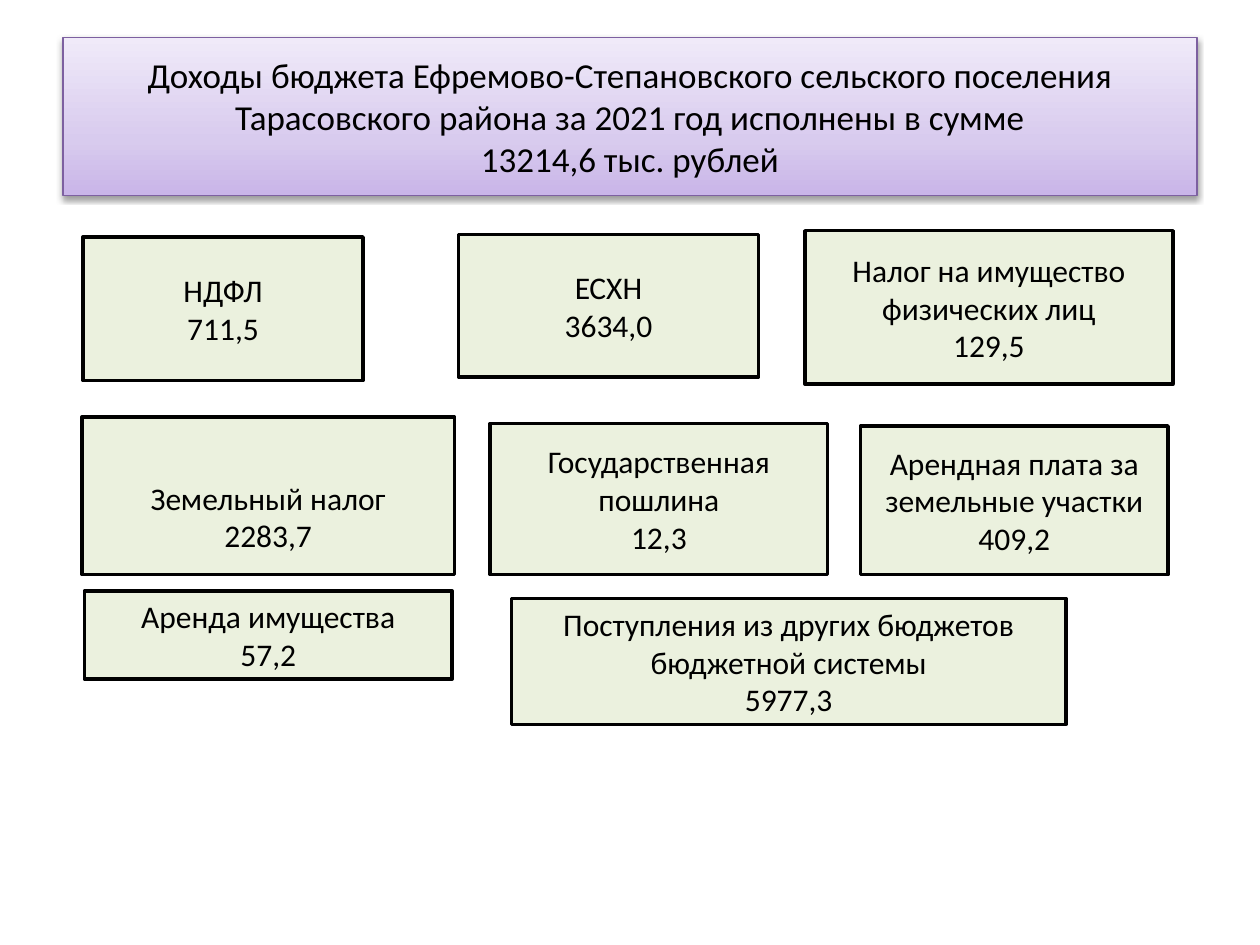
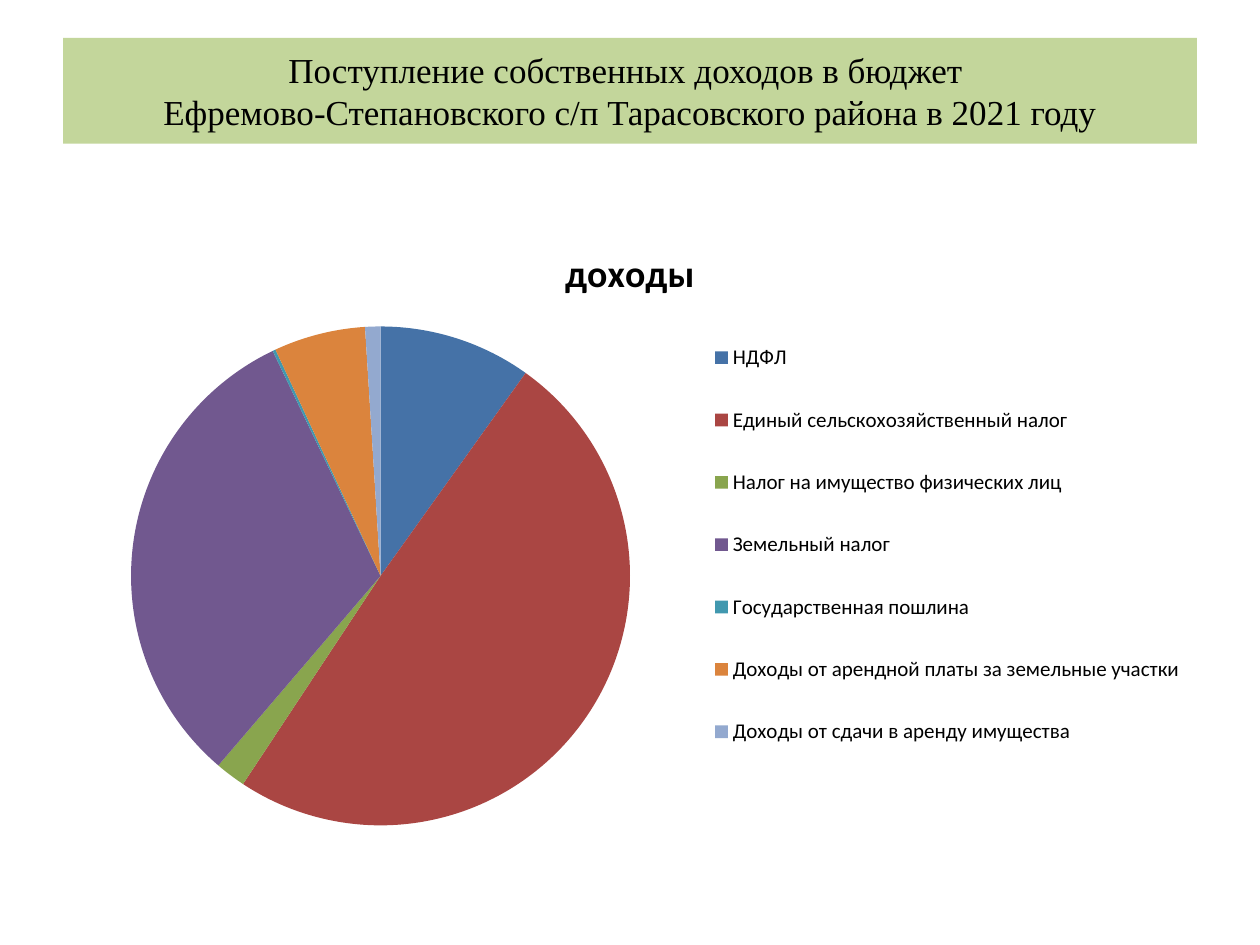
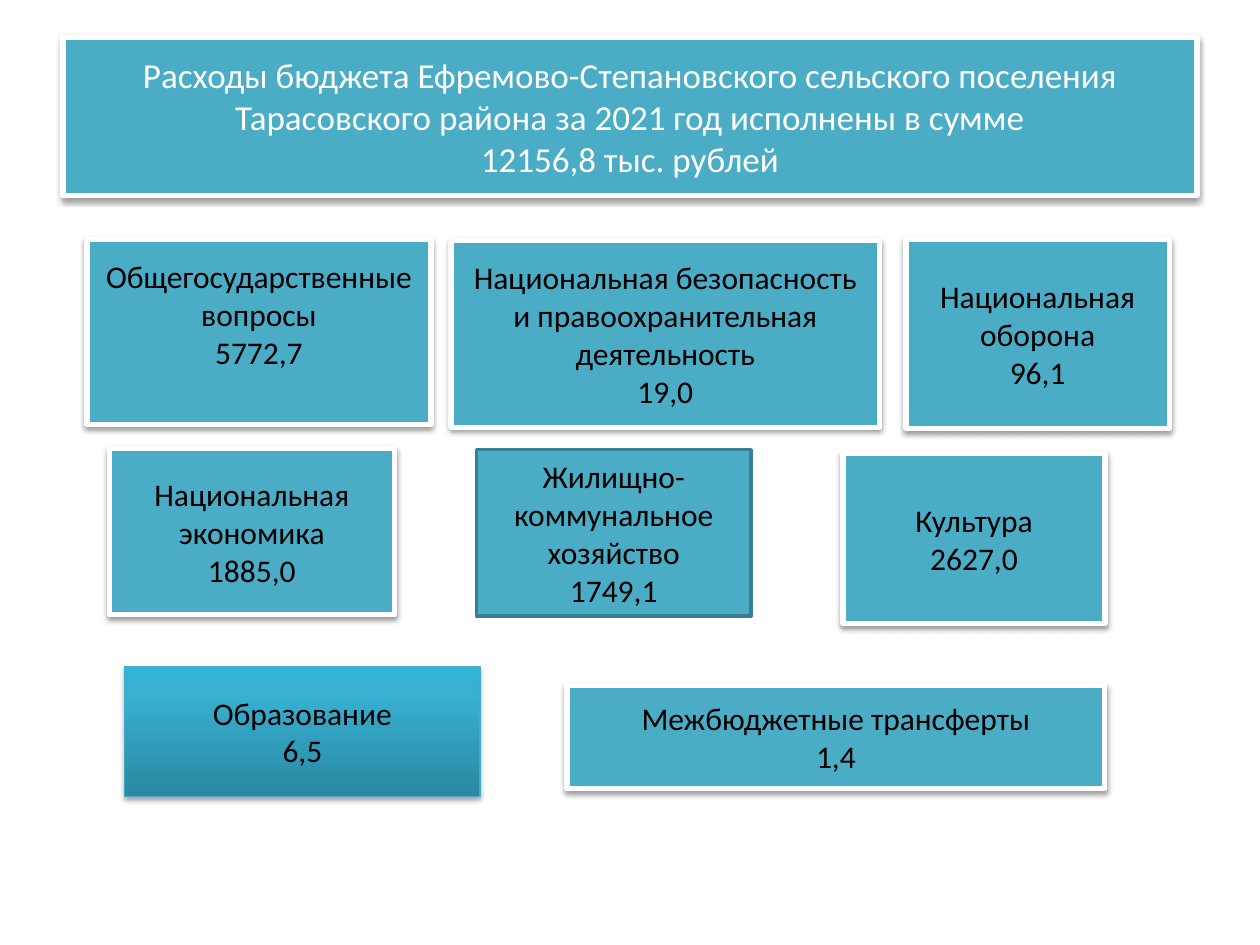
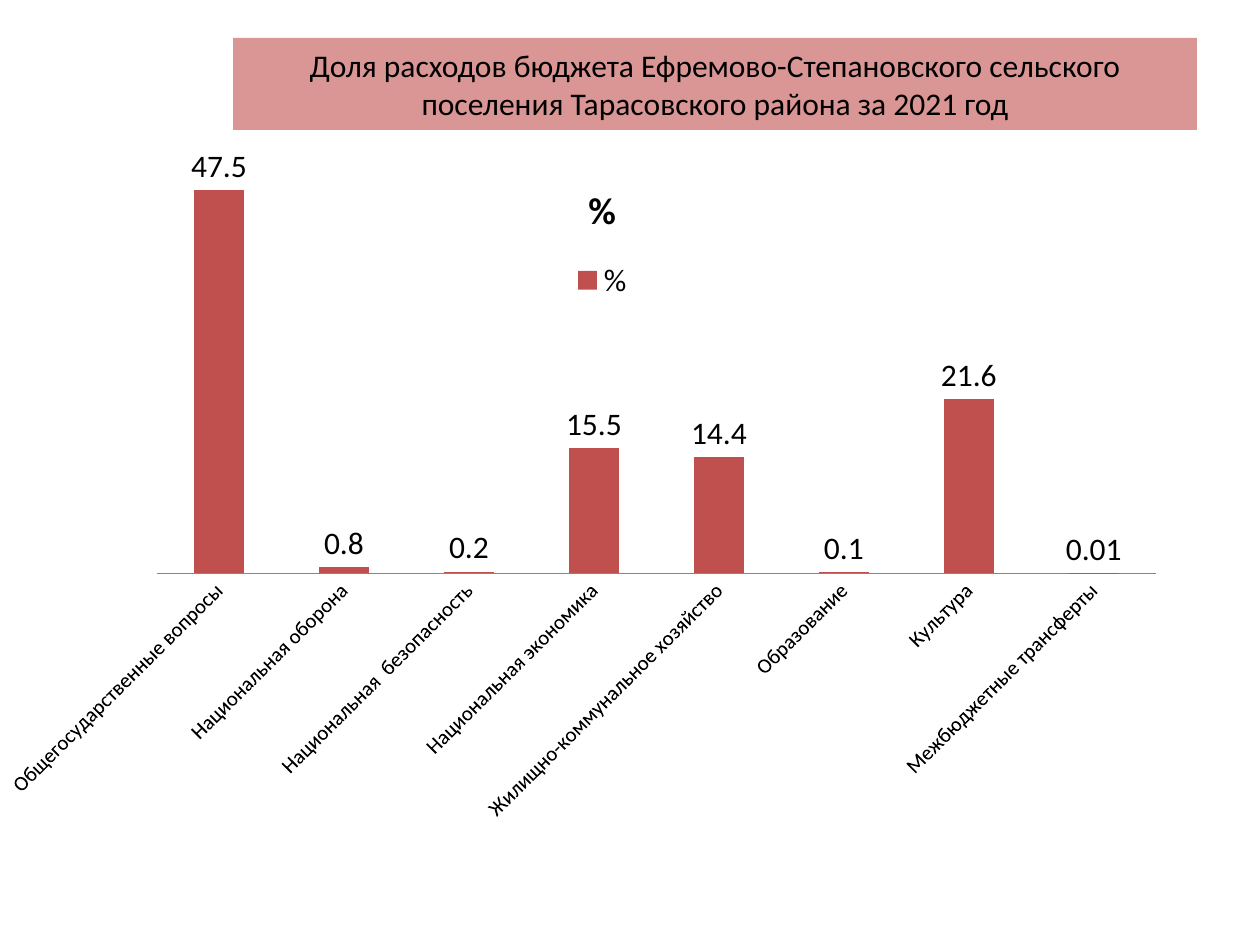
import lxml.etree
import pptx
import pptx.chart.data
import pptx.dml.color
import pptx.enum.chart
import pptx.enum.shapes
import pptx.enum.text
import pptx.oxml
import pptx.oxml.ns
import pptx.util

Pt = pptx.util.Pt
RGB = pptx.dml.color.RGBColor
qn = pptx.oxml.ns.qn
nsdecls = pptx.oxml.ns.nsdecls

BLACK = RGB(0, 0, 0)
WHITE = RGB(255, 255, 255)
PALE_GREEN = RGB(0xEB, 0xF1, 0xDE)
GREEN = RGB(0xC3, 0xD6, 0x9B)
TEAL = RGB(0x4B, 0xAC, 0xC6)
DARK_TEAL = RGB(0x37, 0x7F, 0x92)
EDGE_TEAL = RGB(0x46, 0xAA, 0xC5)
PURPLE = RGB(0x7D, 0x60, 0xA0)
PINK = RGB(0xD9, 0x96, 0x94)
RED = RGB(0xC0, 0x50, 0x4D)
GREY = RGB(0x86, 0x86, 0x86)
LILAC_GRADIENT = [(0, RGB(0xC9, 0xB5, 0xE8)), (35, RGB(0xD8, 0xCB, 0xEE)), (100, RGB(0xF0, 0xEA, 0xF9))]
TEAL_GRADIENT = [(0, RGB(0x2A, 0x88, 0xA2)), (80, RGB(0x37, 0xB1, 0xD2)), (100, RGB(0x34, 0xB4, 0xD6))]
PIE_COLORS = [RGB(0x45, 0x72, 0xA7), RGB(0xAA, 0x46, 0x43), RGB(0x89, 0xA5, 0x4E), RGB(0x71, 0x58, 0x8F),
              RGB(0x41, 0x98, 0xAF), RGB(0xDB, 0x84, 0x3D), RGB(0x93, 0xA9, 0xCF)]

FRAME = {"word_wrap": True, "auto_size": pptx.enum.text.MSO_AUTO_SIZE.NONE,
         "vertical_anchor": pptx.enum.text.MSO_ANCHOR.MIDDLE}
# Shadow values: opacity in percent, distance in points
GREEN_CARD = {"fill": PALE_GREEN, "line": (BLACK, 2)}
TEAL_CARD = {"fill": TEAL, "line": (WHITE, 3), "shadow": (38, 1.6)}
OUTLINED_CARD = {"fill": TEAL, "line": (DARK_TEAL, 2)}
GRADIENT_CARD = {"fill": TEAL_GRADIENT, "line": (EDGE_TEAL, 0.75), "shadow": (35, 1.8)}


def style_box(sp, paragraphs, fill, line=None, shadow=None, font="Calibri", size=18, color=BLACK,
              pad_top=3.6, pad_bottom=3.6):
    """Fill, outline and shade a box and write its centred paragraphs."""
    if isinstance(fill, list):
        sp.fill.gradient()
        sp.fill.gradient_angle = 90
        stops = sp._element.spPr.find(qn("a:gradFill")).find(qn("a:gsLst"))
        for stop in list(stops):
            stops.remove(stop)
        for pos, rgb in fill:
            stop = lxml.etree.SubElement(stops, qn("a:gs"), pos=str(pos * 1000))
            lxml.etree.SubElement(stop, qn("a:srgbClr"), val=str(rgb))
    else:
        sp.fill.solid()
        sp.fill.fore_color.rgb = fill
    if line:
        sp.line.color.rgb, sp.line.width = line[0], Pt(line[1])
    else:
        sp.line.fill.background()
    sp.shadow.inherit = False
    if shadow:
        opacity, distance = shadow
        sp._element.spPr.find(qn("a:effectLst")).append(pptx.oxml.parse_xml(
            f'<a:outerShdw {nsdecls("a")} blurRad="{Pt(3.1)}" dist="{Pt(distance)}" dir="5400000" rotWithShape="0">'
            f'<a:srgbClr val="000000"><a:alpha val="{opacity * 1000}"/></a:srgbClr></a:outerShdw>'))
    tf = sp.text_frame
    for name, value in {**FRAME, "margin_top": Pt(pad_top), "margin_bottom": Pt(pad_bottom)}.items():
        setattr(tf, name, value)
    for i, text in enumerate(paragraphs):
        p = tf.add_paragraph() if i else tf.paragraphs[0]
        p.text = text
        p.alignment = pptx.enum.text.PP_ALIGN.CENTER
        for r in p.runs:
            r.font.name, r.font.size, r.font.color.rgb = font, Pt(size), color


def set_layout(parent, index, x, y, w, h, inner=False):
    """Place a chart part by fractions of the chart area."""
    old = parent.find(qn("c:layout"))
    if old is not None:
        parent.remove(old)
    values = {"xMode": "edge", "yMode": "edge", "x": x, "y": y, "w": w, "h": h}
    if inner:
        values = {"layoutTarget": "inner", **values}
    layout = lxml.etree.Element(qn("c:layout"))
    manual = lxml.etree.SubElement(layout, qn("c:manualLayout"))
    for name, value in values.items():
        lxml.etree.SubElement(manual, qn("c:" + name), val=str(value))
    parent.insert(index, layout)


prs = pptx.Presentation()
prs.slide_width, prs.slide_height = Pt(720), Pt(540)

# Titles: text, left, width, height, format
titles = [
    ("Доходы бюджета Ефремово-Степановского сельского поселения Тарасовского района за 2021 год "
     "исполнены в сумме\n13214,6 тыс. рублей", 36, 648, 90,
     {"fill": LILAC_GRADIENT, "line": (PURPLE, 0.75), "shadow": (38, 1.6), "size": 20}),
    ("Поступление собственных доходов в бюджет \nЕфремово-Степановского с/п Тарасовского района в 2021 году",
     36, 648, 60.5, {"fill": GREEN, "font": "Times New Roman", "size": 20}),
    ("Расходы бюджета Ефремово-Степановского сельского поселения Тарасовского района за 2021 год "
     "исполнены в сумме\n12156,8 тыс. рублей", 36, 648, 90, {**TEAL_CARD, "size": 20, "color": WHITE}),
    ("Доля расходов бюджета Ефремово-Степановского сельского поселения Тарасовского района за 2021 год",
     133.2, 550.8, 52.6, {"fill": PINK}),
]
for text, left, width, height, fmt in titles:
    s = prs.slides.add_slide(prs.slide_layouts[5])
    sp = s.shapes.title
    sp.left, sp.top, sp.width, sp.height = Pt(left), Pt(21.6), Pt(width), Pt(height)
    style_box(sp, [text], **fmt)
income, income_pie, spending, spending_bars = prs.slides

# Cards: slide, name, amount, (left, top, width, height), format
cards = [
    (income, "НДФЛ", "711,5", (47.5, 135.4, 160, 82), GREEN_CARD),
    (income, "ЕСХН", "3634,0", (262, 134, 171.4, 81.4), GREEN_CARD),
    (income, "Налог на имущество физических лиц", "129,5", (460, 131.8, 210.2, 87.8), GREEN_CARD),
    (income, "Земельный налог", "2283,7", (46.8, 238.3, 213, 90), {**GREEN_CARD, "pad_top": 27}),
    (income, "Государственная пошлина", "12,3", (280, 242, 193, 86.4), GREEN_CARD),
    (income, "Арендная плата за земельные участки", "409,2", (491.8, 243.4, 175.7, 85), GREEN_CARD),
    (income, "Поступления из других бюджетов бюджетной системы", "5977,3", (292.3, 342, 316.8, 72), GREEN_CARD),
    (income, "Аренда имущества", "57,2", (48.2, 337.7, 210.2, 50.4), GREEN_CARD),
    (spending, "Общегосударственные вопросы", "5772,7", (49.7, 136.8, 196.6, 105.8),
     {**TEAL_CARD, "pad_bottom": 24}),
    (spending, "Национальная безопасность и правоохранительная деятельность", "19,0",
     (257.8, 137.5, 244.8, 106.6), TEAL_CARD),
    (spending, "Национальная оборона", "96,1", (517.7, 136.8, 150.5, 108), TEAL_CARD),
    (spending, "Жилищно-коммунальное хозяйство", "1749,1", (272.2, 257, 157, 95), OUTLINED_CARD),
    (spending, "Культура", "2627,0", (481.7, 259.2, 149.8, 97.2), TEAL_CARD),
    (spending, "Межбюджетные трансферты", "1,4", (324, 391.7, 307.4, 59), TEAL_CARD),
    (spending, "Национальная экономика", "1885,0", (62.6, 256.3, 162.7, 95), TEAL_CARD),
    (spending, "Образование", "6,5", (71.3, 380.9, 203, 74.2), GRADIENT_CARD),
]
for s, name, amount, box, fmt in cards:
    sp = s.shapes.add_shape(pptx.enum.shapes.MSO_SHAPE.RECTANGLE, *map(Pt, box))
    style_box(sp, [name, amount], **fmt)

# Charts: slide, type, box, title, series name, legend position, values
XL = pptx.enum.chart
charts = [
    (income_pie, XL.XL_CHART_TYPE.PIE, (36, 126, 648, 356.4), "доходы", "доходы", XL.XL_LEGEND_POSITION.RIGHT,
     {"НДФЛ": 10, "Единый сельскохозяйственный налог": 50, "Налог на имущество физических лиц": 2,
      "Земельный налог": 32, "Государственная пошлина": 0.2,
      "Доходы от арендной платы за земельные участки": 6, "Доходы от сдачи в аренду имущества": 1}),
    (spending_bars, XL.XL_CHART_TYPE.COLUMN_CLUSTERED, (0, 84.2, 688.3, 455.8), "%", "%",
     XL.XL_LEGEND_POSITION.TOP,
     {"Общегосударственные вопросы": 47.5, "Национальная оборона": 0.8, "Национальная  безопасность": 0.2,
      "Национальная экономика": 15.5, "Жилищно-коммунальное хозяйство": 14.4, "Образование": 0.1,
      "Культура": 21.6, "Межбюджетные трансферты": 0.01}),
]
drawn = []
for s, kind, box, title, series, legend, values in charts:
    data = pptx.chart.data.CategoryChartData()
    data.categories = list(values)
    data.add_series(series, list(values.values()))
    chart = s.shapes.add_chart(kind, *map(Pt, box), data).chart
    chart.font.name, chart.font.size, chart.font.color.rgb = "Calibri", Pt(18), BLACK
    chart.has_title = True
    tf = chart.chart_title.text_frame
    tf.text = title
    for name, value in {"name": "Calibri", "size": Pt(21.6), "bold": True}.items():
        setattr(tf.paragraphs[0].runs[0].font, name, value)
    chart.has_legend = True
    chart.legend.position = legend
    chart.legend.include_in_layout = False
    drawn.append(chart)
pie, bars = drawn

pie.plots[0].vary_by_categories = True
for i, rgb in enumerate(PIE_COLORS):
    fill = pie.plots[0].series[0].points[i].format.fill
    fill.solid()
    fill.fore_color.rgb = rgb
pie.legend.font.size = Pt(12)
set_layout(pie.legend._element, 1, 0.57, 0.14, 0.42, 0.76)
set_layout(pie._chartSpace.chart.plotArea, 0, 0.06, 0.17, 0.44, 0.8, inner=True)

plot = bars.plots[0]
plot.vary_by_categories = False
plot.gap_width = 150
plot.series[0].format.fill.solid()
plot.series[0].format.fill.fore_color.rgb = RED
plot.has_data_labels = True
labels = plot.data_labels
for name, value in {"show_value": True, "number_format": "General", "number_format_is_linked": False,
                    "position": XL.XL_LABEL_POSITION.OUTSIDE_END}.items():
    setattr(labels, name, value)
labels.font.size = Pt(18)
axis = bars.value_axis
for name, value in {"visible": False, "has_major_gridlines": False,
                    "minimum_scale": 0, "maximum_scale": 50}.items():
    setattr(axis, name, value)
axis = bars.category_axis
axis.major_tick_mark = XL.XL_TICK_MARK.NONE
axis.format.line.color.rgb = GREY
axis.tick_labels.font.size = Pt(12)
axis._element.find(qn("c:txPr")).find(qn("a:bodyPr")).set("rot", "-2700000")
set_layout(bars._chartSpace.chart.plotArea, 0, 0.13, 0.02, 0.83, 0.51, inner=True)

prs.save("out.pptx")
